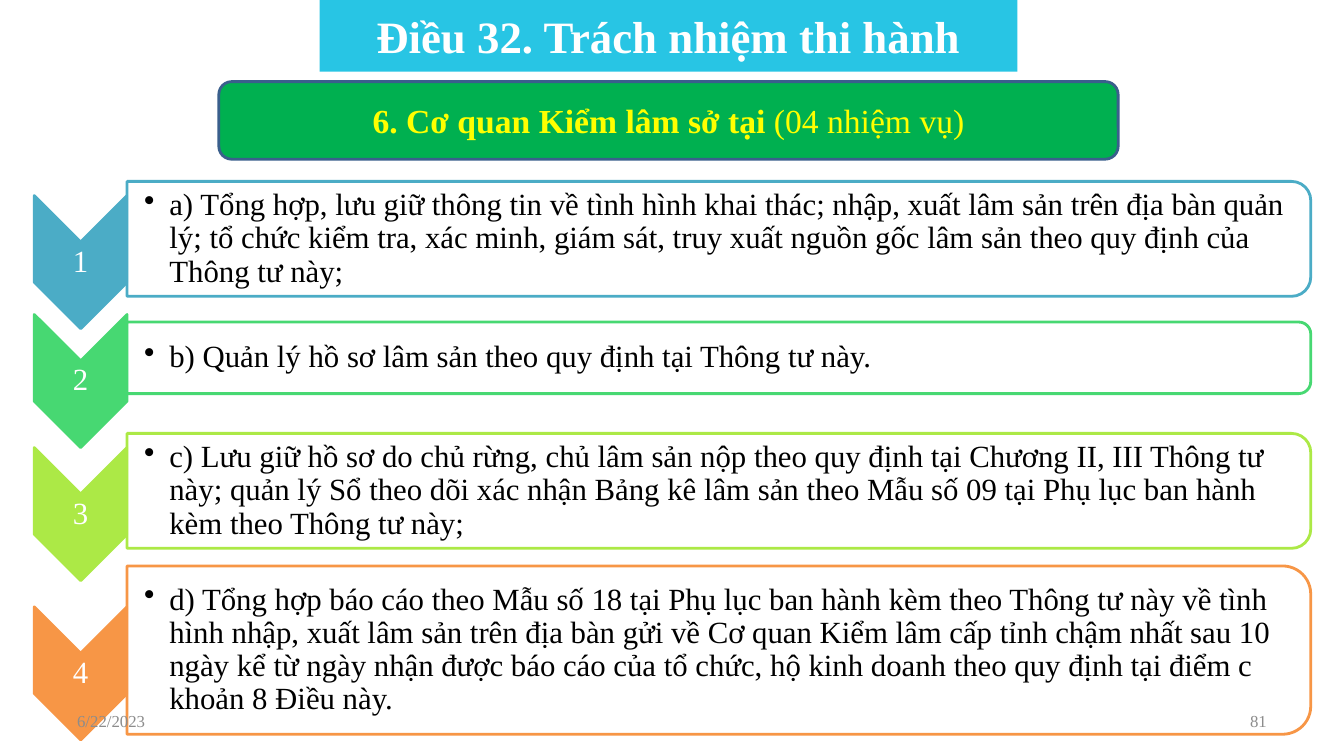
from lxml import etree
from pptx import Presentation, util as u
from pptx.dml.color import RGBColor
from pptx.enum import shapes, text
from pptx.oxml.ns import qn

WHITE = RGBColor(0xFF, 0xFF, 0xFF)
BLACK = RGBColor(0, 0, 0)
GREY = RGBColor(0x8C, 0x8C, 0x8C)
CYAN = RGBColor(0x28, 0xC5, 0xE4)
GREEN = RGBColor(0, 0xB0, 0x50)
NAVY = RGBColor(0x3A, 0x5F, 0x8C)
YELLOW = RGBColor(0xFF, 0xFF, 0)
TEAL = RGBColor(0x4B, 0xAC, 0xC6)
MINT = RGBColor(0x47, 0xD8, 0x72)
LIME = RGBColor(0xAC, 0xE9, 0x46)
ORANGE = RGBColor(0xF7, 0x96, 0x46)

WIDE, HIGH = 13.33, 7.5
FONT = "Times New Roman"
LEFT, MID, RIGHT = text.PP_ALIGN.LEFT, text.PP_ALIGN.CENTER, text.PP_ALIGN.RIGHT
KIND = shapes.MSO_SHAPE

# Duties: middle of the panel, its height, colour, wording
DUTIES = [
    (2.37, 1.14, TEAL, "a) Tổng hợp, lưu giữ thông tin về tình hình khai thác; nhập, xuất lâm sản "
     "trên địa bàn quản lý; tổ chức kiểm tra, xác minh, giám sát, truy xuất nguồn gốc lâm sản "
     "theo quy định của Thông tư này;"),
    (3.55, 0.71, MINT, "b) Quản lý hồ sơ lâm sản theo quy định tại Thông tư này."),
    (4.87, 1.14, LIME, "c) Lưu giữ hồ sơ do chủ rừng, chủ lâm sản nộp theo quy định tại Chương II, "
     "III Thông tư này; quản lý Sổ theo dõi xác nhận Bảng kê lâm sản theo Mẫu số 09 tại Phụ lục "
     "ban hành kèm theo Thông tư này;"),
    (6.45, 1.67, ORANGE, "d) Tổng hợp báo cáo theo Mẫu số 18 tại Phụ lục ban hành kèm theo Thông tư "
     "này về tình hình nhập, xuất lâm sản trên địa bàn gửi về Cơ quan Kiểm lâm cấp tỉnh chậm nhất "
     "sau 10 ngày kể từ ngày nhận được báo cáo của tổ chức, hộ kinh doanh theo quy định tại điểm c "
     "khoản 8 Điều này."),
]


def place(box):
    return [u.Inches(n) for n in box]


def write(frame, runs, size, color, align=LEFT, pads=None, bullet=False, gap=None):
    """Fill a text frame with one paragraph of (wording, bold) runs."""
    look = {"word_wrap": True, "auto_size": text.MSO_AUTO_SIZE.NONE,
            "vertical_anchor": text.MSO_ANCHOR.MIDDLE}
    if pads:
        sides = ("left", "top", "right", "bottom")
        look.update({f"margin_{s}": u.Inches(n) for s, n in zip(sides, pads)})
    for key, val in look.items():
        setattr(frame, key, val)
    para = frame.paragraphs[0]
    para.alignment = align
    if gap:
        para.line_spacing = gap
    if bullet:
        props = para._p.get_or_add_pPr()
        props.set("marL", str(u.Inches(0.25)))
        props.set("indent", str(-u.Inches(0.25)))
        etree.SubElement(props, qn("a:buChar")).set("char", "•")
    for words, bold in runs:
        run = para.add_run()
        run.text = words
        style = {"name": FONT, "size": u.Pt(size), "bold": bold}
        for key, val in style.items():
            setattr(run.font, key, val)
        run.font.color.rgb = color


def label(slide, box, words, size, color, **more):
    frame = slide.shapes.add_textbox(*place(box)).text_frame
    write(frame, [(words, False)], size, color, **more)


def block(slide, kind, box, fill, line):
    shape = slide.shapes.add_shape(kind, *place(box))
    shape.shadow.inherit = False
    shape.fill.solid()
    shape.fill.fore_color.rgb = fill
    shape.line.color.rgb = line
    shape.line.width = u.Pt(2)
    return shape


def turned(slide, kind, box, fill, line):
    """Draw a shape turned by 90 degrees so that it covers the box."""
    x, y, w, h = box
    shape = block(slide, kind, (x + (w - h) / 2, y + (h - w) / 2, h, w), fill, line)
    shape.rotation = 90
    return shape


def title(slide, box):
    head = slide.shapes.title
    head.left, head.top, head.width, head.height = place(box)
    head.fill.solid()
    head.fill.fore_color.rgb = CYAN
    write(head.text_frame, [("Điều 32. Trách nhiệm thi hành", True)], 32, WHITE, MID)


def banner(slide, box):
    shape = block(slide, KIND.ROUNDED_RECTANGLE, box, GREEN, NAVY)
    runs = [("6. Cơ quan Kiểm lâm sở tại ", True), ("(04 nhiệm vụ)", False)]
    write(shape.text_frame, runs, 24, YELLOW, MID)


def duty(slide, box, num, color, words):
    x, y, w, h = box
    tag, tall = 0.92, 1.32
    mid = y + h / 2 + 0.23
    # Numbered chevron
    turned(slide, KIND.CHEVRON, (x, mid - tall / 2, tag, tall), color, color)
    label(slide, (x, mid - 0.2, tag, 0.4), str(num), 22, WHITE,
          align=MID, pads=[0.02] * 4, gap=0.9)
    # Panel, slightly see-through
    panel = (x + tag, y, w - tag, h)
    shape = turned(slide, KIND.ROUND_2_SAME_RECTANGLE, panel, WHITE, color)
    tint = shape._element.spPr.find(qn("a:solidFill"))[0]
    etree.SubElement(tint, qn("a:alpha")).set("val", "90000")
    label(slide, (x + tag, y + h * 0.05, w - tag - h * 0.05, h * 0.9), words, 22, BLACK,
          pads=(0.17, 0.02, 0.02, 0.02), bullet=True, gap=0.9)


def footer(slide, box):
    x, y, w, h = box
    part = 3.11
    label(slide, (x, y, part, h), "6/22/2023", 12, GREY)
    label(slide, (x + w - part, y, part, h), "81", 12, GREY, align=RIGHT)


def main():
    deck = Presentation()
    deck.slide_width, deck.slide_height = u.Inches(WIDE), u.Inches(HIGH)
    slide = deck.slides.add_slide(deck.slide_layouts[5])
    for num, (mid, tall, color, words) in enumerate(DUTIES, 1):
        duty(slide, (0.34, mid - tall / 2, 12.66, tall), num, color, words)
    footer(slide, (WIDE * 0.05, 6.95, WIDE * 0.9, 0.4))
    title(slide, (3.17, 0, 6.92, 0.71))
    banner(slide, (2.17, 0.81, 8.92, 0.77))
    deck.save("out.pptx")


if __name__ == "__main__":
    main()
